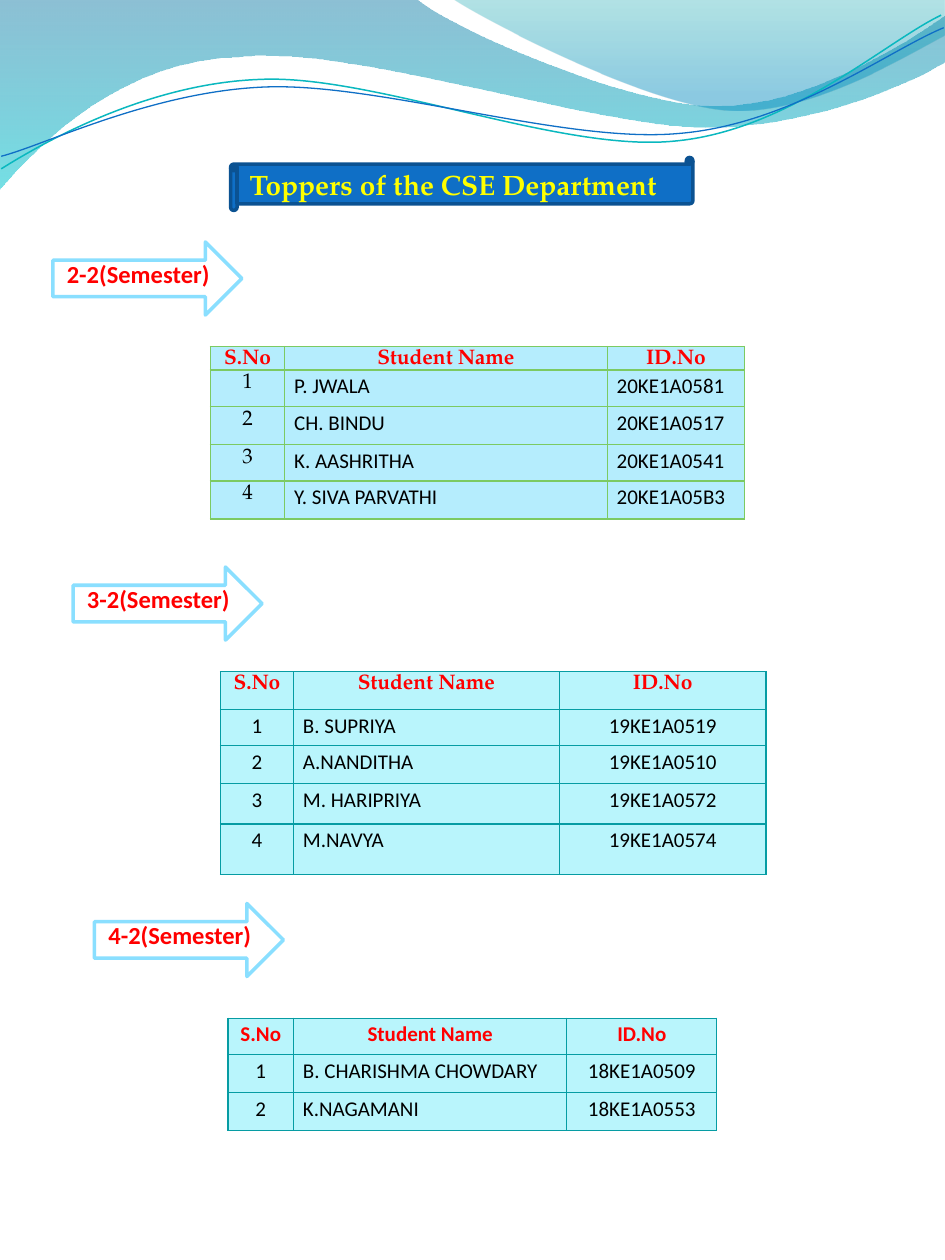
from lxml.etree import SubElement
from pptx import Presentation
from pptx.dml.color import RGBColor as RGB
from pptx.enum.shapes import MSO_SHAPE as Shape
from pptx.enum.text import MSO_ANCHOR as Anchor, PP_ALIGN as Align
from pptx.oxml.ns import qn
from pptx.util import Emu, Pt

PX = 9144
SERIF, SANS = "TeX Gyre Pagella", "Calibri"
COLORS = {
    "white": "FFFFFF", "black": "000000", "red": "FF0000", "yellow": "FFFF00",
    "blue": "0F6FC6", "navy": "0B5292", "sky": "8ADFFF", "turquoise": "0AB8BF",
    "wave_top": "0074A1", "wave_bottom": "00C6CF", "crest_top": "00A1A9", "crest_bottom": "008BBF",
    "pale_blue": "B5EDFD", "pale_aqua": "B9F5FC", "green": "7CCA62", "teal": "069CA3",
}


def add_text(paragraph, text, size, font, color, bold):
    run = paragraph.add_run()
    run.text = text
    run.font.size = Pt(size)
    run.font.name = font
    run.font.bold = bold
    run.font.color.rgb = RGB.from_string(COLORS[color])


def add_curve(slide, start, steps, close):
    points = [(step[i] * PX, step[i + 1] * PX) for step in steps for i in range(0, len(step), 2)]
    builder = slide.shapes.build_freeform(start[0] * PX, start[1] * PX, scale=1.0)
    builder.add_line_segments(points, close=close)
    shape = builder.convert_to_shape()
    shape.shadow.inherit = False
    segments = iter(list(shape.element.spPr.iter(qn("a:lnTo"))))
    for step in steps:
        segment = next(segments)
        if len(step) == 6:
            segment.tag = qn("a:cubicBezTo")
            for _ in range(2):
                control = next(segments)
                segment.append(control[0])
                control.getparent().remove(control)
    return shape


presentation = Presentation()
presentation.slide_width = Emu(750 * PX)
presentation.slide_height = Emu(1000 * PX)
slide = presentation.slides.add_slide(presentation.slide_layouts[6])

waves = [
    ((0, -1), [(330, -1), (357, 22, 498, 84, 569, 84), (640, 84, 719, 34, 750, 12), (751, 48),
               (738, 58, 652, 101, 559, 101), (466, 100, 286, 37, 193, 45), (97, 47, 34, 111, -1, 151)],
     [(0, "wave_top", 45), (1, "wave_bottom", 55)]),
    ((359, -1), [(382, 15, 511, 82, 577, 87), (642, 92, 721, 43, 750, 28), (750, 0)],
     [(0, "crest_top", 30), (0.8, "crest_bottom", 45)]),
]
for start, steps, stops in waves:
    wave = add_curve(slide, start, steps, True)
    wave.line.fill.background()
    wave.fill.gradient()
    wave.fill.gradient_angle = 270
    for stop, (position, color, _) in zip(wave.fill.gradient_stops, stops):
        stop.position = position
        stop.color.rgb = RGB.from_string(COLORS[color])
    for element, (_, _, alpha) in zip(wave.element.spPr.iter(qn("a:srgbClr")), stops):
        SubElement(element, qn("a:alpha")).set("val", str(alpha * 1000))

wave_lines = [
    ((1, 134), [(36, 112, 118, 66, 207, 63), (296, 59, 445, 121, 535, 112), (626, 104, 703, 33, 747, 12)],
     "turquoise", 0.85),
    ((1, 124), [(36, 115, 122, 72, 212, 69), (302, 66, 449, 114, 538, 106), (628, 99, 705, 40, 749, 22)],
     "blue", 0.75),
]
for start, steps, color, width in wave_lines:
    wave_line = add_curve(slide, start, steps, False)
    wave_line.fill.background()
    wave_line.line.color.rgb = RGB.from_string(COLORS[color])
    wave_line.line.width = Pt(width)

banners = [
    (Shape.HORIZONTAL_SCROLL, (183, 125, 367, 42), "blue", "navy",
     "Toppers of the CSE Department", 16, SERIF, "yellow", Align.LEFT, 5),
]
for left, top, label in [(42, 192, "2-2(Semester)"), (58, 450, "3-2(Semester)"), (75, 717, "4-2(Semester)")]:
    banners.append((Shape.RIGHT_ARROW, (left, top, 150, 58), "white", "sky",
                    label, 14, SANS, "red", Align.CENTER, 13))
for kind, box, fill, line, label, size, font, color, align, margin_bottom in banners:
    banner = slide.shapes.add_shape(kind, *[Emu(n * PX) for n in box])
    banner.shadow.inherit = False
    banner.fill.solid()
    banner.fill.fore_color.rgb = RGB.from_string(COLORS[fill])
    banner.line.color.rgb = RGB.from_string(COLORS[line])
    banner.line.width = Pt(2)
    banner.text_frame.word_wrap = kind == Shape.HORIZONTAL_SCROLL
    banner.text_frame.vertical_anchor = Anchor.MIDDLE
    banner.text_frame.margin_bottom = Emu(margin_bottom * PX)
    paragraph = banner.text_frame.paragraphs[0]
    paragraph.alignment = align
    add_text(paragraph, label, size, font, color, True)

header = ("S.No", "Student Name", "ID.No")
toppers = [
    {"at": (167, 275), "columns": (59, 256, 109), "rows": (11, 29, 30, 29, 30),
     "fill": "pale_blue", "border": ("green", 1), "header_font": SERIF, "number_font": SERIF,
     "id_align": Align.LEFT,
     "students": [("P. JWALA", "20KE1A0581"), ("CH. BINDU", "20KE1A0517"),
                  ("K. AASHRITHA", "20KE1A0541"), ("Y. SIVA PARVATHI", "20KE1A05B3")]},
    {"at": (175, 533), "columns": (58, 211, 164), "rows": (30, 29, 30, 32, 40),
     "fill": "pale_aqua", "border": ("teal", 0.75), "header_font": SERIF, "number_font": SANS,
     "id_align": Align.CENTER,
     "students": [("B. SUPRIYA", "19KE1A0519"), ("A.NANDITHA", "19KE1A0510"),
                  ("M. HARIPRIYA", "19KE1A0572"), ("M.NAVYA", "19KE1A0574")]},
    {"at": (181, 808), "columns": (52, 217, 119), "rows": (29, 30, 30),
     "fill": "pale_aqua", "border": ("teal", 0.75), "header_font": SANS, "number_font": SANS,
     "id_align": Align.CENTER,
     "students": [("B. CHARISHMA CHOWDARY", "18KE1A0509"), ("K.NAGAMANI", "18KE1A0553")]},
]
for semester in toppers:
    left, top = semester["at"]
    columns, heights = semester["columns"], semester["rows"]
    table = slide.shapes.add_table(
        len(heights), len(columns), Emu(left * PX), Emu(top * PX),
        Emu(sum(columns) * PX), Emu(sum(heights) * PX)).table
    for column, width in zip(table.columns, columns):
        column.width = Emu(width * PX)
    for row, height in zip(table.rows, heights):
        row.height = Emu(height * PX)
    records = [header] + [(str(n), *student) for n, student in enumerate(semester["students"], 1)]
    border_color, border_width = semester["border"]
    for r, record in enumerate(records):
        for c, text in enumerate(record):
            cell = table.cell(r, c)
            cell.margin_left = cell.margin_right = Pt(5.4)
            cell.margin_top = cell.margin_bottom = 0
            properties = cell._tc.get_or_add_tcPr()
            for side in ("lnL", "lnR", "lnT", "lnB"):
                border = SubElement(properties, qn("a:" + side))
                border.set("w", str(int(Pt(border_width))))
                border_fill = SubElement(border, qn("a:solidFill"))
                SubElement(border_fill, qn("a:srgbClr")).set("val", COLORS[border_color])
            cell.fill.solid()
            cell.fill.fore_color.rgb = RGB.from_string(COLORS[semester["fill"]])
            paragraph = cell.text_frame.paragraphs[0]
            paragraph.line_spacing = 1.15
            paragraph.space_after = Pt(10)
            if r == 0:
                paragraph.alignment = Align.CENTER
                add_text(paragraph, text, 12, semester["header_font"], "red", True)
            else:
                paragraph.alignment = (Align.CENTER, Align.LEFT, semester["id_align"])[c]
                font = semester["number_font"] if c == 0 else SANS
                add_text(paragraph, text, 12, font, "black", False)

presentation.save("out.pptx")
